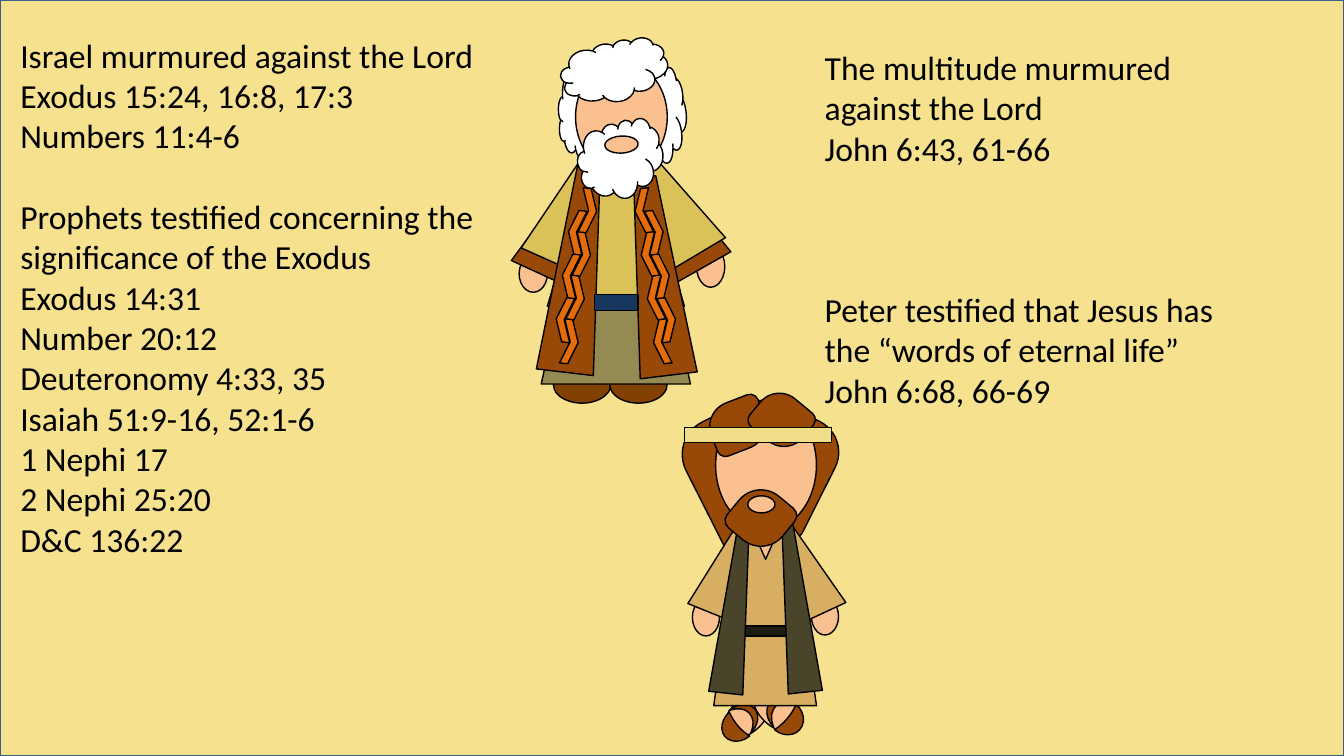
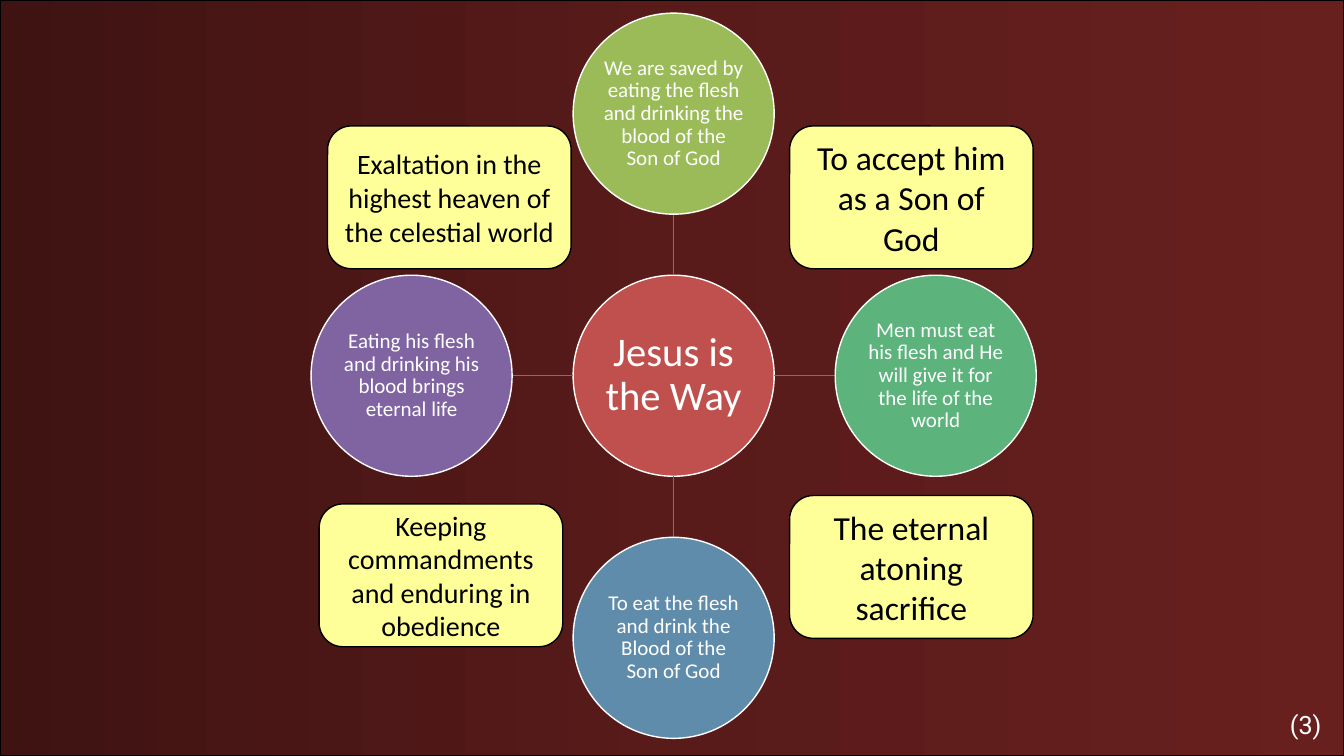
from copy import deepcopy

from lxml import etree
from pptx import Presentation
from pptx.dml.color import RGBColor
from pptx.enum.shapes import MSO_CONNECTOR, MSO_SHAPE
from pptx.enum.text import MSO_ANCHOR, PP_ALIGN
from pptx.oxml.ns import qn
from pptx.util import Pt

RECT, OVAL, ROUND = MSO_SHAPE.RECTANGLE, MSO_SHAPE.OVAL, MSO_SHAPE.ROUNDED_RECTANGLE
TRAP, CLOUD, MOON = MSO_SHAPE.TRAPEZOID, MSO_SHAPE.CLOUD, MSO_SHAPE.MOON
LEAF, CHEVRON = MSO_SHAPE.ROUND_2_DIAG_RECTANGLE, MSO_SHAPE.CHEVRON
TRIANGLE = MSO_SHAPE.ISOSCELES_TRIANGLE
STRAIGHT = MSO_CONNECTOR.STRAIGHT
LEFT, CENTER, RIGHT = PP_ALIGN.LEFT, PP_ALIGN.CENTER, PP_ALIGN.RIGHT
TOP, MIDDLE = MSO_ANCHOR.TOP, MSO_ANCHOR.MIDDLE

WIDTH, HEIGHT = 960, 540
BLACK, WHITE = "000000", "FFFFFF"
SKIN, BROWN, SHOE = "FAC090", "984807", "824100"
TAN, STOLE, DARK, BAND = "D8AE62", "4A452A", "1E1C11", "F1DE8B"
GOLD, OLIVE, ORANGE, NAVY = "DAC158", "948A54", "E46C0A", "17375E"
SAND, SAND_EDGE, NOTE, LINK = "F6E28E", "3A5F8C", "FFFF99", "8064A2"

color = RGBColor.from_string


def draw(shapes, kind, x, y, w, h, fill, rot=0, adj=(), flip=False, line=BLACK):
    """Add an outlined preset shape, turned and mirrored as asked."""
    sp = shapes.add_shape(kind, Pt(x), Pt(y), Pt(w), Pt(h))
    sp.shadow.inherit = False
    sp.fill.solid()
    sp.fill.fore_color.rgb = color(fill)
    sp.line.color.rgb = color(line)
    sp.line.width = Pt(1)
    sp.rotation = rot
    for i, value in enumerate(adj):
        sp.adjustments[i] = value
    if flip:
        sp.element.spPr.get_or_add_xfrm().set("flipH", "1")
    return sp


def write(sp, *paragraphs, size=24, font="Calibri", fill=BLACK, align=LEFT,
          anchor=TOP, spacing=None, inset=None, gaps=None):
    """Fill a shape with paragraphs; gaps maps a paragraph index to space before it."""
    tf = sp.text_frame
    tf.word_wrap = True
    tf.vertical_anchor = anchor
    if inset is not None:
        tf.margin_left = tf.margin_top = tf.margin_right = tf.margin_bottom = Pt(inset)
    for i, text in enumerate(paragraphs):
        p = tf.paragraphs[0] if i == 0 else tf.add_paragraph()
        p.alignment = align
        if spacing:
            p.line_spacing = spacing
        if gaps and i in gaps:
            p.space_before = Pt(gaps[i])
        r = p.add_run()
        r.text = text
        r.font.size = Pt(size)
        r.font.name = font
        r.font.color.rgb = color(fill)


prs = Presentation()
prs.slide_width, prs.slide_height = Pt(WIDTH), Pt(HEIGHT)
blank = prs.slide_layouts[6]

# Slide 1: murmuring and testimony
s = prs.slides.add_slide(blank)
draw(s.shapes, RECT, 0, 0, WIDTH, HEIGHT, SAND, line=SAND_EDGE)

write(s.shapes.add_textbox(Pt(7.4), Pt(21.2), Pt(356.4), Pt(414.7)),
      "Israel murmured against the Lord",
      "Exodus 15:24, 16:8, 17:3",
      "Numbers 11:4-6",
      "Prophets testified concerning the significance of the Exodus",
      "Exodus 14:31",
      "Number 20:12",
      "Deuteronomy 4:33, 35",
      "Isaiah 51:9-16, 52:1-6",
      "1 Nephi 17",
      "2 Nephi 25:20",
      "D&C 136:22",
      gaps={3: 28.8})
write(s.shapes.add_textbox(Pt(582), Pt(30), Pt(326.2), Pt(269.3)),
      "The multitude murmured against the Lord",
      "John 6:43, 61-66",
      "Peter testified that Jesus has the “words of eternal life”",
      "John 6:68, 66-69",
      gaps={2: 86.4})

# Rows: kind, left, top, width, height, fill, rotation, adjustments, flip
HAIR, SLEEVE, COAT = (0.167, 0.5), (0.341,), (0.305,)
HEEL, STRAP = (0.875,), (0.344,)
peter_parts = [
    # hair and face
    (LEAF, 542.2, 296.6, 49, 84.2, BROWN, 206.6, HAIR),
    (LEAF, 496.1, 296.6, 51.8, 90.7, BROWN, 333.2, (0, 0.5), True),
    (OVAL, 511.2, 285.8, 72, 92.9, SKIN),
    # sandalled feet
    (OVAL, 522, 490.3, 23.8, 41, SKIN, 45.9),
    (MOON, 516.2, 510.5, 13.7, 22.3, BROWN, 319.7, HEEL),
    (MOON, 526.3, 499.7, 14.4, 22.3, BROWN, 135.9, STRAP),
    (OVAL, 542.2, 485.3, 25.9, 41, SKIN, 314.1, (), True),
    (MOON, 559.4, 504.7, 13.7, 23.8, BROWN, 40.3, HEEL, True),
    (MOON, 548.6, 493.9, 14.4, 23.8, BROWN, 224.1, STRAP, True),
    # hands, sleeves and robe
    (OVAL, 579.6, 427, 19.4, 26.6, SKIN),
    (OVAL, 494.6, 427.7, 19.4, 26.6, SKIN),
    (TRAP, 558, 374.4, 33.8, 66.2, TAN, 335, SLEEVE),
    (TRAP, 502.6, 373.7, 33.8, 66.2, TAN, 22.1, SLEEVE),
    (TRAP, 509.8, 375.8, 73.4, 128.2, TAN),
    (TRIANGLE, 536.4, 375.8, 20.9, 23.8, SKIN, 180),
    (RECT, 520.6, 447.1, 52.6, 7.2, DARK),
    (TRAP, 512.6, 374.4, 24.5, 121, STOLE, 6.1, SLEEVE, True),
    (TRAP, 556.6, 373.7, 24.5, 121, STOLE, 353.9, SLEEVE),
    # fringe, beard, mouth and headband
    (LEAF, 509, 283.7, 36, 40.3, BROWN, 248.9, HAIR),
    (LEAF, 540.7, 280.1, 35.3, 39.6, BROWN, 309.6, HAIR),
    (LEAF, 523.4, 349.9, 40.3, 40.3, BROWN, 309.6, HAIR),
    (OVAL, 534.2, 354.2, 19.4, 12.2, SKIN),
    (RECT, 488.9, 305.3, 105.1, 10.8, BAND),
]
prophet_parts = [
    # shoes, left arm and robe
    (OVAL, 395.3, 261.4, 41, 26.6, SHOE),
    (OVAL, 435.6, 261.4, 41, 26.6, SHOE),
    (OVAL, 370.8, 182.2, 20.2, 26.6, SKIN),
    (TRAP, 379.4, 121.7, 53.3, 79.2, BROWN, 24.7, COAT),
    (TRAP, 385.2, 116.6, 41, 72, GOLD, 24.1, COAT),
    (TRAP, 386.6, 126, 106.6, 148.3, OLIVE, 0, COAT),
    (TRAP, 391, 116.6, 97.9, 102.2, GOLD, 0, COAT),
    (TRAP, 391.7, 116.6, 41, 149.8, BROWN, 6.7, COAT),
    # side hair and face
    (CLOUD, 398.9, 46.8, 32.4, 66.2, WHITE),
    (CLOUD, 453.6, 49, 36.7, 67.7, WHITE, 352.9),
    (OVAL, 411.1, 43.9, 65.5, 79.2, SKIN),
    # right arm, top hair, coat, beard and mouth
    (OVAL, 497.5, 175.7, 20.2, 29.5, SKIN),
    (TRAP, 461.5, 116.6, 43.9, 79.2, BROWN, 330.5, COAT),
    (TRAP, 455, 110.2, 46.8, 77, GOLD, 329.2, COAT),
    (CLOUD, 400.3, 29.5, 77, 43.2, WHITE, 352.9),
    (TRAP, 448.6, 126, 41, 142.6, BROWN, 353.1, COAT),
    (CLOUD, 412.6, 86.4, 61.2, 55.4, WHITE, 352.9),
    (OVAL, 437.8, 91.4, 12.2, 23.8, SKIN, 87.1),
]

# Zigzag trim: seven chevrons down the right of the coat, mirrored on the left
MIRROR = 868.3
for mirrored in (False, True):
    for i in (1, 2, 4, 3, 6, 0, 5):
        x = 453.6 + 4.4 * (i // 2) + 8.6 * (i % 2)
        y = 134.6 + 15.6 * i
        rot = 353.4 if i % 2 else 173.4
        if mirrored:
            x, rot = MIRROR - x, 360 - rot
        prophet_parts.append((CHEVRON, x, y, 11.5, 31.7, ORANGE, rot, (), mirrored))
prophet_parts.append((RECT, 424.8, 210.2, 31, 11.5, NAVY))

for parts in (peter_parts, prophet_parts):
    figure = s.shapes.add_group_shape()
    for part in parts:
        draw(figure.shapes, *part)

# Slide 2: hub with four circles and four notes
s = prs.slides.add_slide(blank)
backdrop = draw(s.shapes, RECT, 0, 0, WIDTH, HEIGHT, WHITE)
backdrop.fill.gradient()
backdrop.fill.gradient_angle = 0
stop_list = backdrop.element.spPr.find(qn("a:gradFill")).find(qn("a:gsLst"))
stop_list.insert(1, deepcopy(stop_list[0]))
for stop, position, shade in zip(backdrop.fill.gradient_stops, (0, 0.5, 1),
                                 ("3E1312", "581B1A", "68201E")):
    stop.position = position
    stop.color.rgb = color(shade)

HUB_X, HUB_Y, RADIUS, REACH = 481.2, 268.4, 71.8, 187.2
# Rows: horizontal and vertical direction from the hub, fill, size, text
circles = [
    (0, 0, "C0504D", 29, "Jesus is the Way"),
    (0, -1, "9BBB59", 15,
     "We are saved by eating the flesh and drinking the blood of the Son of God"),
    (1, 0, "5CB37C", 15,
     "Men must eat his flesh and He will give it for the life of the world"),
    (0, 1, "608CAB", 15, "To eat the flesh and drink the Blood of the Son of God"),
    (-1, 0, "8064A2", 15, "Eating his flesh and drinking his blood brings eternal life"),
]
for dx, dy, fill, size, text in circles:
    if dx or dy:
        near, far = RADIUS, REACH - RADIUS
        link = s.shapes.add_connector(
            STRAIGHT, Pt(HUB_X + dx * near), Pt(HUB_Y + dy * near),
            Pt(HUB_X + dx * far), Pt(HUB_Y + dy * far))
        link.line.color.rgb = color(LINK)
        link.line.width = Pt(1)
        etree.SubElement(link.element.spPr, qn("a:effectLst"))
    sp = draw(s.shapes, OVAL, HUB_X + dx * REACH - RADIUS, HUB_Y + dy * REACH - RADIUS,
              2 * RADIUS, 2 * RADIUS, fill, line=WHITE)
    write(sp, text, size=size, fill=WHITE, align=CENTER, anchor=MIDDLE,
          spacing=0.9, inset=0.8)

notes = [
    (564, 90, 24, "To accept him as a Son of God"),
    (564, 354, 24, "The eternal atoning sacrifice"),
    (228, 360, 20, "Keeping commandments and enduring in obedience"),
    (234, 90, 20, "Exaltation in the highest heaven of the celestial world"),
]
for x, y, size, text in notes:
    sp = draw(s.shapes, ROUND, x, y, 174, 102, NOTE)
    write(sp, text, size=size, align=CENTER, anchor=MIDDLE)

write(s.shapes.add_textbox(Pt(651), Pt(503.3), Pt(300), Pt(28.8)), "(3)",
      size=18, font="Roboto", fill=WHITE, align=RIGHT)

prs.save("out.pptx")
